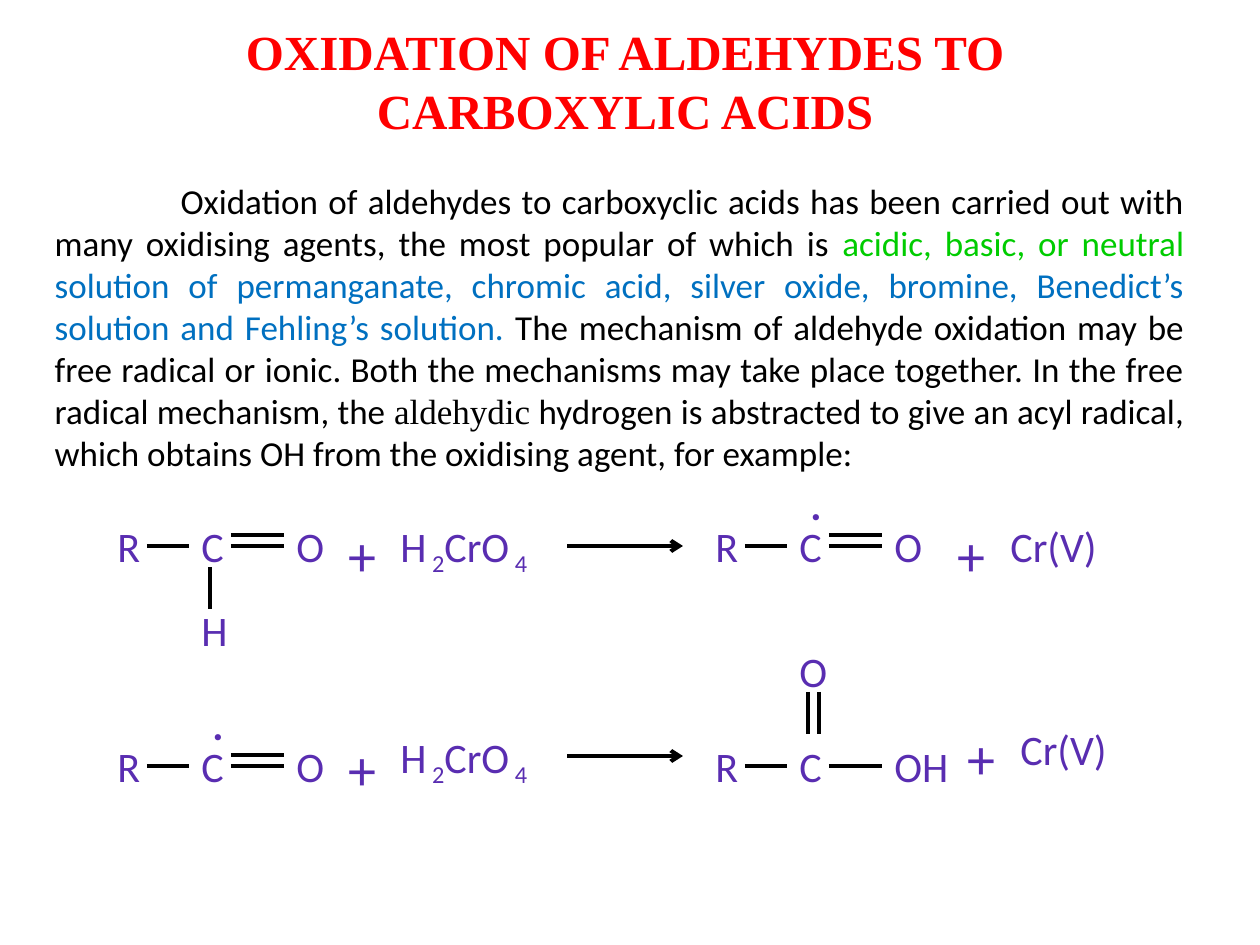
from lxml import etree
from pptx import Presentation
from pptx.dml.color import RGBColor
from pptx.enum.shapes import MSO_CONNECTOR
from pptx.enum.text import MSO_ANCHOR, MSO_AUTO_SIZE, PP_ALIGN
from pptx.oxml.ns import qn
from pptx.util import Emu, Pt

STRAIGHT = MSO_CONNECTOR.STRAIGHT
TOP = MSO_ANCHOR.TOP
NO_FIT = MSO_AUTO_SIZE.NONE
CENTER, JUSTIFY, LEFT = PP_ALIGN.CENTER, PP_ALIGN.JUSTIFY, PP_ALIGN.LEFT

COLORS = {"title": "FF0000", "text": "000000", "green": "00CC00",
          "blue": "0070C0", "formula": "592DB1", "bond": "000000"}
SANS, SERIF = "Calibri", "Times New Roman"

TITLE = "OXIDATION OF ALDEHYDES TO CARBOXYLIC ACIDS"
BODY = [
    ("Oxidation of aldehydes to carboxyclic acids has been carried out with many "
     "oxidising agents, the most popular of which is ", "text", SANS),
    ("acidic, basic, or neutral ", "green", SANS),
    ("solution of permanganate, chromic acid, silver oxide, bromine, Benedict’s "
     "solution and Fehling’s solution.", "blue", SANS),
    (" The mechanism of aldehyde oxidation may be free radical or ionic. Both the "
     "mechanisms may take place together. In the free radical mechanism, the ",
     "text", SANS),
    ("aldehydic", "text", SERIF),
    (" hydrogen is abstracted to give an acyl radical, which obtains OH from the "
     "oxidising agent, for example:", "text", SANS),
]
FIRST_LINE_INDENT = 126

LEFT_X, RIGHT_X = 105, 703
ROW_1, ROW_2 = 514, 734

BACKBONE_ATOMS = [("R", 0, 0), ("C", 84, 0)]
BACKBONE_BONDS = [(42, 32, 84, 32), (126, 32, 179, 32)]
CARBONYL = [(126, 21, 179, 21)]
RADICAL = ([("O", 179, 0), (".", 95, -42)], CARBONYL)
ALDEHYDE = ([("O", 179, 0), ("H", 84, 84)], CARBONYL + [(105, 53, 105, 95)])
ACID = ([("OH", 179, 0), ("O", 84, -95)],
        [(105, -42, 105, 0), (116, -42, 116, 0)])
MOLECULES = [
    (LEFT_X, ROW_1, ALDEHYDE), (RIGHT_X, ROW_1, RADICAL),
    (LEFT_X, ROW_2, RADICAL), (RIGHT_X, ROW_2, ACID),
]

PLUSES = [(336, 514), (945, 514), (336, 728), (955, 717)]
OXIDANTS = [(388, 514), (388, 725)]
OXIDANT = [("H", False), (" 2", True), ("CrO", False), (" 4", True)]
PRODUCTS = [(998, 514), (1008, 717)]
ARROWS = [(567, 546, 683, 546), (567, 756, 683, 756)]


def px(n):
    return Emu(n * 914400 // 126)


def add_run(p, text, size, color, font=SANS, bold=False, sub=False):
    r = p.add_run()
    r.text = text
    f = r.font
    f.size, f.name, f.bold = Pt(size), font, bold
    f.color.rgb = RGBColor.from_string(COLORS[color])
    if sub:
        f._element.set("baseline", "-25000")


def place(sp, x, y, w, h, align):
    sp.left, sp.top, sp.width, sp.height = px(x), px(y), px(w), px(h)
    tf = sp.text_frame
    tf.word_wrap, tf.auto_size, tf.vertical_anchor = True, NO_FIT, TOP
    p = tf.paragraphs[0]
    p.alignment, p.space_before = align, Pt(0)
    return p


def add_label(s, x, y, runs, w=126, h=63, size=24, bold=False):
    p = place(s.shapes.add_textbox(0, 0, 0, 0), x, y, w, h, LEFT)
    for text, sub in runs:
        add_run(p, text, size, "formula", bold=bold, sub=sub)


def add_line(s, x1, y1, x2, y2, arrow=False):
    c = s.shapes.add_connector(STRAIGHT, px(x1), px(y1), px(x2), px(y2))
    c.line.width = Pt(2.25)
    c.line.color.rgb = RGBColor.from_string(COLORS["bond"])
    if arrow:
        etree.SubElement(c.line._get_or_add_ln(), qn("a:tailEnd"), type="arrow")
    etree.SubElement(c._element.spPr, qn("a:effectLst"))


def add_molecule(s, x, y, atoms, bonds):
    for text, dx, dy in BACKBONE_ATOMS + atoms:
        add_label(s, x + dx, y + dy, [(text, False)], bold=text == ".")
    for x1, y1, x2, y2 in BACKBONE_BONDS + bonds:
        add_line(s, x + x1, y + y1, x + x2, y + y2)


def main():
    prs = Presentation()
    prs.slide_width, prs.slide_height = px(1260), px(945)
    s = prs.slides.add_slide(prs.slide_layouts[1])

    p = place(s.shapes.title, 63, 15, 1124, 131, CENTER)
    add_run(p, TITLE, 28, "title", SERIF, bold=True)

    p = place(s.placeholders[1], 42, 173, 1155, 310, JUSTIFY)
    pPr = p._p.get_or_add_pPr()
    pPr.set("marL", "0")
    pPr.set("indent", str(px(FIRST_LINE_INDENT)))
    etree.SubElement(pPr, qn("a:buNone"))
    for text, color, font in BODY:
        add_run(p, text, 20, color, font)

    for x, y, (atoms, bonds) in MOLECULES:
        add_molecule(s, x, y, atoms, bonds)
    for x, y in PLUSES:
        add_label(s, x, y, [("+", False)], w=53, h=81, size=32)
    for x, y in OXIDANTS:
        add_label(s, x, y, OXIDANT, w=199, h=115)
    for x, y in PRODUCTS:
        add_label(s, x, y, [("Cr(V)", False)], w=158)
    for ends in ARROWS:
        add_line(s, *ends, arrow=True)

    prs.save("out.pptx")


if __name__ == "__main__":
    main()
